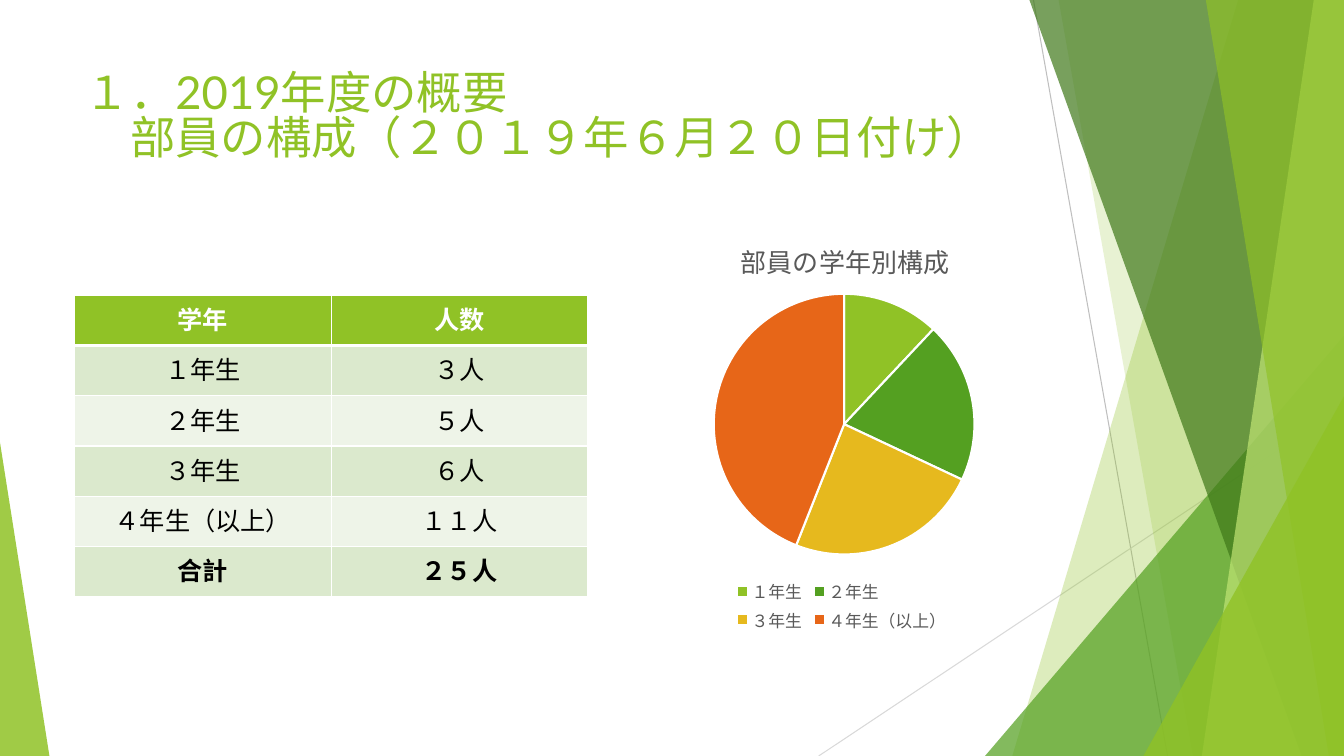
import dataclasses

import pptx
import pptx.chart.data
import pptx.dml.color
import pptx.enum.chart
import pptx.enum.shapes
import pptx.enum.text
import pptx.oxml
import pptx.oxml.ns
import pptx.util

Inches = pptx.util.Inches
Pt = pptx.util.Pt
qn = pptx.oxml.ns.qn


@dataclasses.dataclass(frozen=True)
class Theme:
    font: str = "Lato"
    lime: str = "90C226"
    green: str = "54A021"
    dark_green: str = "3F7819"
    pale_lime: str = "C0E474"
    yellow: str = "E6B91E"
    orange: str = "E76618"
    white: str = "FFFFFF"
    black: str = "000000"
    grey: str = "595959"
    row_fills: tuple = ("DBE9CD", "EEF4E8")
    line_greys: tuple = ("BFBFBF", "D9D9D9")
    title_size: float = 32.4
    table_size: float = 18
    chart_title_size: float = 18.6
    legend_size: float = 12


@dataclasses.dataclass(frozen=True)
class Box:
    left: float
    top: float
    width: float
    height: float

    def lengths(self):
        return [Inches(n) for n in (self.left, self.top, self.width, self.height)]


THEME = Theme()
PAGE = Box(0, 0, 13.33, 7.5)
HEADCOUNT = [("学年", "人数"), ("１年生", "３人"), ("２年生", "５人"),
             ("３年生", "６人"), ("４年生（以上）", "１１人"), ("合計", "２５人")]
SHARES = [12, 20, 24, 44]


def rgb(colour):
    return pptx.dml.color.RGBColor.from_string(colour)


def style_font(font, size, colour, bold=False):
    font.name = THEME.font
    font.size = Pt(size)
    font.bold = bold
    font.color.rgb = rgb(colour)


def add_span(para, text, size, colour, bold=False):
    span = para.add_run()
    span.text = text
    style_font(span.font, size, colour, bold)


def paint_facet(shape, colour, opacity):
    shape.shadow.inherit = False
    shape.line.fill.background()
    shape.fill.solid()
    shape.fill.fore_color.rgb = rgb(colour)
    tint = shape.fill._xPr.find(".//" + qn("a:srgbClr"))
    tint.append(pptx.oxml.parse_xml(
        f'<a:alpha {pptx.oxml.ns.nsdecls("a")} val="{opacity * 1000}"/>'))


def add_band(page, box, top_left, bottom_left, colour, opacity):
    """Fill from a slanted left edge to the right side of the box."""
    right, bottom = box.left + box.width, box.top + box.height
    corners = [(top_left, box.top), (right, box.top), (right, bottom), (bottom_left, bottom)]
    points = [(Inches(x), Inches(y)) for x, y in corners]
    builder = page.shapes.build_freeform(*points[0])
    builder.add_line_segments(points[1:], close=True)
    paint_facet(builder.convert_to_shape(), colour, opacity)


def add_wedge(page, box, width, height, on_right, colour, opacity):
    """Stand a right triangle in a bottom corner of the box."""
    left = box.left + (box.width - width if on_right else 0)
    place = Box(left, box.top + box.height - height, width, height)
    wedge = page.shapes.add_shape(
        pptx.enum.shapes.MSO_SHAPE.ISOSCELES_TRIANGLE, *place.lengths())
    wedge.adjustments[0] = 1 if on_right else 0
    paint_facet(wedge, colour, opacity)


def add_hairline(page, start, end, colour):
    line = page.shapes.add_connector(
        pptx.enum.shapes.MSO_CONNECTOR.STRAIGHT, *map(Inches, start + end))
    line.line.color.rgb = rgb(colour)
    line.line.width = Pt(0.75)
    line._element.spPr.append(pptx.oxml.parse_xml(
        f'<a:effectLst {pptx.oxml.ns.nsdecls("a")}/>'))


def draw_facets(page, box):
    right, bottom = box.left + box.width, box.top + box.height
    add_hairline(page, (right - 3.08, box.top), (right - 1.75, bottom), THEME.line_greys[0])
    add_hairline(page, (right, bottom - 3.47), (right - 5.21, bottom), THEME.line_greys[1])
    add_band(page, box, right - 1.05, right - 3.29, THEME.lime, 30)
    add_band(page, box, right - 2.83, right - 1.5, THEME.lime, 20)
    add_wedge(page, box, 3.56, 4.17, True, THEME.green, 72)
    add_band(page, box, right - 3.12, right - 0.42, THEME.dark_green, 70)
    add_band(page, box, right - 0.3, right - 1.41, THEME.pale_lime, 70)
    add_band(page, box, right - 1.37, right - 0.15, THEME.lime, 65)
    add_wedge(page, box, 1.99, 3.57, True, THEME.lime, 80)
    add_wedge(page, box, 0.49, 3.11, False, THEME.lime, 85)


def write_title(page, box):
    title = page.shapes.title
    title.left, title.top, title.width, title.height = box.lengths()
    page.shapes.element.append(title.element)  # in front of the facets
    frame = title.text_frame
    frame.word_wrap = True
    frame.auto_size = pptx.enum.text.MSO_AUTO_SIZE.NONE
    frame.vertical_anchor = pptx.enum.text.MSO_ANCHOR.TOP
    para = frame.paragraphs[0]
    para.alignment = pptx.enum.text.PP_ALIGN.LEFT
    para.line_spacing = 0.84
    add_span(para, "１．2019年度の概要", THEME.title_size, THEME.lime)
    para.add_line_break()
    add_span(para, "　部員の構成（２０１９年６月２０日付け）", THEME.title_size, THEME.lime)


def border_cell(cell, top, bottom):
    """Draw white borders; top and bottom are widths in points."""
    properties = cell._tc.get_or_add_tcPr()
    sides = [("lnL", 1), ("lnR", 1), ("lnT", top), ("lnB", bottom)]
    for index, (side, width) in enumerate(sides):
        properties.insert(index, pptx.oxml.parse_xml(
            f'<a:{side} {pptx.oxml.ns.nsdecls("a")} w="{Pt(width)}"><a:solidFill>'
            f'<a:srgbClr val="{THEME.white}"/></a:solidFill></a:{side}>'))


def add_headcount_table(page, box):
    last = len(HEADCOUNT) - 1
    table = page.shapes.add_table(len(HEADCOUNT), 2, *box.lengths()).table
    for row, texts in enumerate(HEADCOUNT):
        fill = THEME.row_fills[(row - 1) % 2] if row else THEME.lime
        colour = THEME.black if row else THEME.white
        for column, text in enumerate(texts):
            cell = table.cell(row, column)
            cell.fill.solid()
            cell.fill.fore_color.rgb = rgb(fill)
            border_cell(cell, 3 if row == 1 else 1, 1 if row else 3)
            para = cell.text_frame.paragraphs[0]
            para.alignment = pptx.enum.text.PP_ALIGN.CENTER
            add_span(para, text, THEME.table_size, colour, row in (0, last))


def set_layout(chart, tag, index, **values):
    """Fix a chart part at fractions of the chart's size."""
    part = chart.element.find(".//" + qn(tag))
    for old in part.findall(qn("c:layout")):
        part.remove(old)
    target = '<c:layoutTarget val="inner"/>' if tag == "c:plotArea" else ""
    modes = '<c:xMode val="edge"/><c:yMode val="edge"/>'
    sizes = "".join(f'<c:{name} val="{value}"/>' for name, value in values.items())
    part.insert(index, pptx.oxml.parse_xml(
        f'<c:layout {pptx.oxml.ns.nsdecls("c")}><c:manualLayout>'
        f'{target}{modes}{sizes}</c:manualLayout></c:layout>'))


def add_grade_pie(page, box):
    data = pptx.chart.data.CategoryChartData()
    data.categories = [grade for grade, count in HEADCOUNT[1:-1]]
    data.add_series("Series 1", SHARES)
    chart = page.shapes.add_chart(
        pptx.enum.chart.XL_CHART_TYPE.PIE, *box.lengths(), data).chart
    style_font(chart.font, 10, THEME.black)
    chart.has_title = True
    add_span(chart.chart_title.text_frame.paragraphs[0], "部員の学年別構成",
             THEME.chart_title_size, THEME.grey)
    chart.has_legend = True
    chart.legend.position = pptx.enum.chart.XL_LEGEND_POSITION.BOTTOM
    chart.legend.include_in_layout = False
    style_font(chart.legend.font, THEME.legend_size, THEME.grey)
    chart.plots[0].vary_by_categories = True
    slices = chart.plots[0].series[0].points
    for index, colour in enumerate((THEME.lime, THEME.green, THEME.yellow, THEME.orange)):
        look = slices[index].format
        look.fill.solid()
        look.fill.fore_color.rgb = rgb(colour)
        look.line.color.rgb = rgb(THEME.white)
        look.line.width = Pt(1.5)
    set_layout(chart, "c:title", 1, x=0.27, y=0.05)
    set_layout(chart, "c:plotArea", 0, x=0.22, y=0.19, w=0.57, h=0.61)
    set_layout(chart, "c:legend", 1, x=0.26, y=0.85, w=0.48, h=0.14)


def main():
    deck = pptx.Presentation()
    deck.slide_width, deck.slide_height = Inches(PAGE.width), Inches(PAGE.height)
    page = deck.slides.add_slide(deck.slide_layouts[5])
    draw_facets(page, PAGE)
    write_title(page, Box(0.74, 0.67, 9.4, 1.44))
    add_headcount_table(page, Box(0.74, 2.93, 5.09, 2.99))
    add_grade_pie(page, Box(6.06, 2.11, 4.58, 4.24))
    deck.save("out.pptx")


if __name__ == "__main__":
    main()
